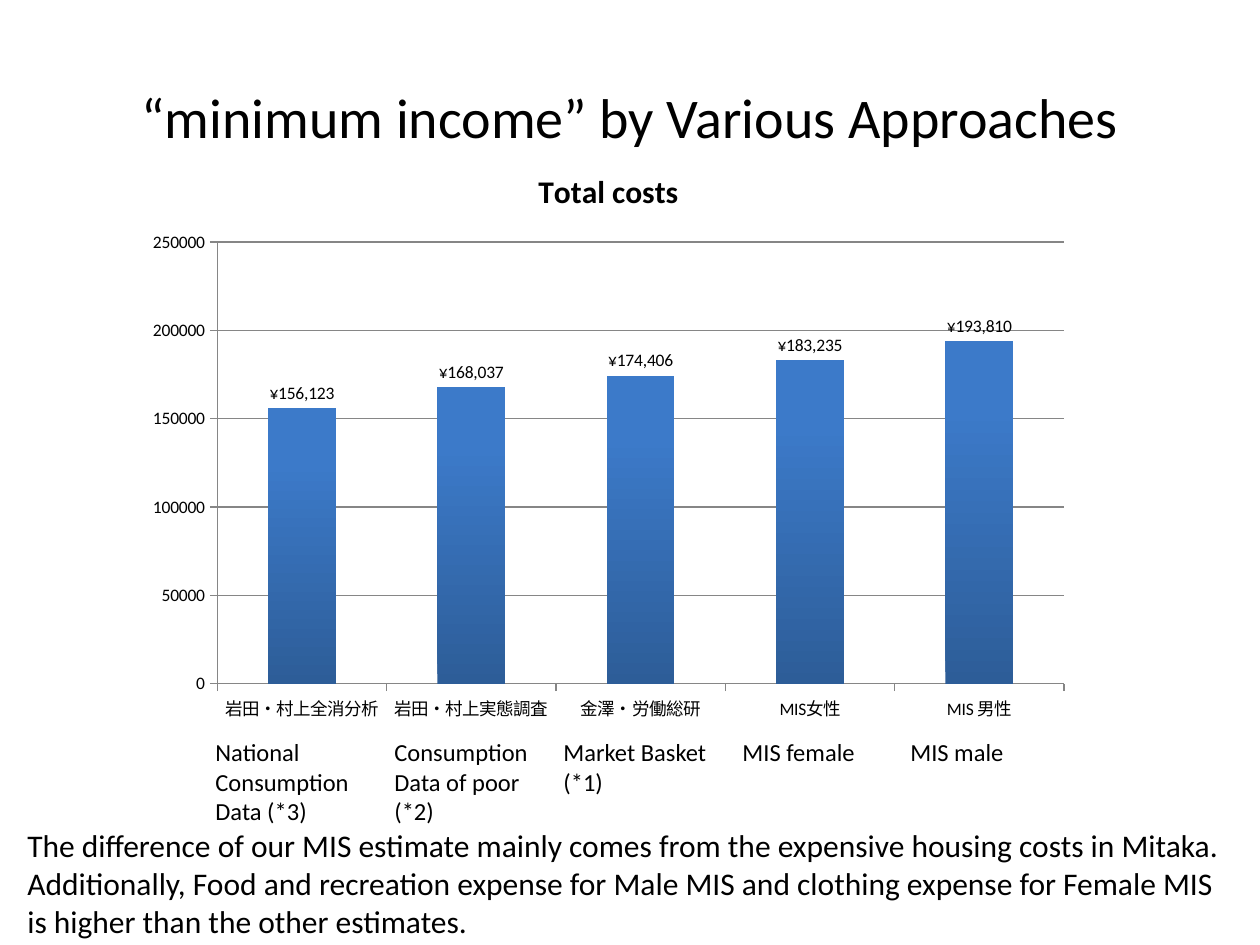
from pptx import Presentation
from pptx.chart.data import CategoryChartData
from pptx.dml.color import RGBColor
from pptx.enum.chart import XL_CHART_TYPE as ChartType, XL_LABEL_POSITION as LabelPosition
from pptx.enum.chart import XL_TICK_MARK as TickMark
from pptx.enum.text import MSO_ANCHOR as Anchor, PP_ALIGN as Align
from pptx.util import Emu, Pt

PX = 914400 // 126
FONT = "Calibri"
BLACK = RGBColor(0x00, 0x00, 0x00)
GREY = RGBColor(0x86, 0x86, 0x86)
BAR_BOTTOM = RGBColor(0x2D, 0x5D, 0x98)
BAR_TOP = RGBColor(0x3C, 0x7A, 0xC9)
YEN_FORMAT = '"¥"#,##0;\\-"¥"#,##0'

COSTS = {
    "岩田・村上全消分析": 156123,
    "岩田・村上実態調査": 168037,
    "金澤・労働総研": 174406,
    "MIS女性": 183235,
    "MIS 男性": 193810,
}
CAPTIONS = [
    (203, 169, "National Consumption Data (*3)"),
    (382, 169, "Consumption Data of poor (*2)"),
    (551, 169, "Market Basket (*1)"),
    (730, 169, "MIS female"),
    (898, 139, "MIS male"),
]
COMMENT = (
    "The difference of our MIS estimate mainly comes from the expensive housing costs "
    "in Mitaka.  Additionally, Food and recreation expense for Male MIS and clothing "
    "expense for Female MIS is higher than the other estimates."
)


def box(*lengths):
    """Turn px lengths into EMU."""
    return [Emu(length * PX) for length in lengths]


def set_format(target, values):
    """Set each attribute in values on the target."""
    for name, value in values.items():
        setattr(target, name, value)


def set_font(font, size, bold=False):
    """Give a font the slide's typeface and colour."""
    set_format(font, {"name": FONT, "size": Pt(size), "bold": bold})
    font.color.rgb = BLACK


def add_text(slide, place, text, size, align=Align.LEFT, anchor=Anchor.TOP):
    """Add a wrapped text box with one paragraph."""
    frame = slide.shapes.add_textbox(*box(*place)).text_frame
    set_format(frame, {"word_wrap": True, "vertical_anchor": anchor})
    paragraph = frame.paragraphs[0]
    paragraph.alignment = align
    run = paragraph.add_run()
    run.text = text
    set_font(run.font, size)


def style_axis(axis, gridlines):
    """Set the ticks, line and gridlines of an axis."""
    set_format(axis, {
        "major_tick_mark": TickMark.OUTSIDE,
        "minor_tick_mark": TickMark.NONE,
        "has_major_gridlines": gridlines,
    })
    lines = [axis.format.line]
    if gridlines:
        lines.append(axis.major_gridlines.format.line)
    for line in lines:
        line.color.rgb = GREY
        line.width = Pt(0.75)


def style_bars(plot):
    """Set the gap, gradient and value labels of the bars."""
    set_format(plot, {"gap_width": 150, "vary_by_categories": False, "has_data_labels": True})
    set_format(plot.data_labels, {
        "show_value": True,
        "number_format": YEN_FORMAT,
        "number_format_is_linked": False,
        "position": LabelPosition.OUTSIDE_END,
    })
    set_font(plot.data_labels.font, 10)
    fill = plot.series[0].format.fill
    fill.gradient()
    fill.gradient_angle = 90
    stops = zip(fill.gradient_stops, (BAR_BOTTOM, BAR_TOP), (0, 0.8))
    for stop, color, position in stops:
        stop.color.rgb = color
        stop.position = position


def add_cost_chart(slide, place):
    """Add the column chart of total costs."""
    data = CategoryChartData()
    data.categories = list(COSTS)
    data.add_series("Series 1", list(COSTS.values()))
    chart = slide.shapes.add_chart(ChartType.COLUMN_CLUSTERED, *box(*place), data).chart
    set_font(chart.font, 10)
    set_format(chart, {"has_legend": False, "has_title": True})
    title = chart.chart_title
    title.include_in_layout = False
    title.text_frame.text = "Total costs"
    set_font(title.text_frame.paragraphs[0].runs[0].font, 18, bold=True)
    style_axis(chart.category_axis, gridlines=False)
    style_axis(chart.value_axis, gridlines=True)
    set_format(chart.value_axis, {"minimum_scale": 0, "maximum_scale": 250000, "major_unit": 50000})
    set_format(chart.value_axis.tick_labels, {"number_format": "General", "number_format_is_linked": False})
    style_bars(chart.plots[0])


def main():
    """Build and save the slide."""
    presentation = Presentation()
    presentation.slide_width, presentation.slide_height = box(1260, 945)
    slide = presentation.slides.add_slide(presentation.slide_layouts[6])
    add_text(slide, (63, 38, 1134, 157), "“minimum income” by Various Approaches",
             32, Align.CENTER, Anchor.MIDDLE)
    add_cost_chart(slide, (134, 145, 949, 588))
    for left, width, caption in CAPTIONS:
        add_text(slide, (left, 731, width, 102), caption, 14)
    add_text(slide, (15, 820, 1235, 165), COMMENT, 18)
    presentation.save("out.pptx")


if __name__ == "__main__":
    main()
